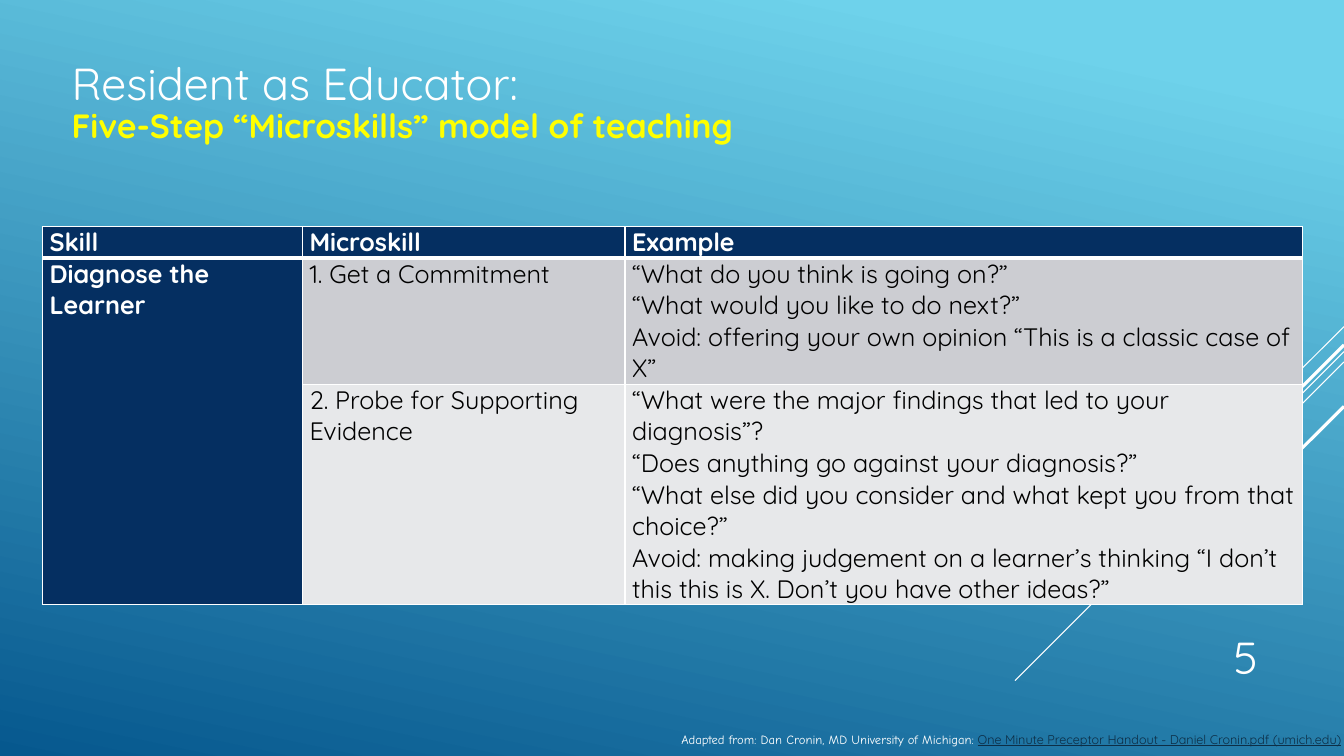
import dataclasses
import typing

import lxml.etree
import pptx
import pptx.dml.color
import pptx.enum.shapes
import pptx.enum.text
import pptx.oxml.ns
import pptx.util

Cm = pptx.util.Cm
Pt = pptx.util.Pt
qn = pptx.oxml.ns.qn
Align = pptx.enum.text.PP_ALIGN
Anchor = pptx.enum.text.MSO_ANCHOR
SANS = "Quicksand"
WHITE = "FFFFFF"
NAVY = "052F61"
WIDE = 33.87


@dataclasses.dataclass
class Ray:
    top: float
    left: float
    end: float
    width: float


@dataclasses.dataclass
class Item:
    row: int
    col: int
    text: str
    fill: str
    ink: str = "000000"
    bold: bool = False


RAYS = [
    Ray(8.23, 31.32, 10.77, 0.75),
    Ray(8.86, 25.58, 17.15, 0.75),
    Ray(9.12, 28.6, 14.4, 0.75),
    Ray(8.69, 29.01, 13.54, 2.25),
    Ray(10.24, 30.33, 13.77, 2.25),
]
COLS = [6.55, 8.13, 17.07]
ROWS = [0.79, 3.18, 5.56]
ITEMS = [
    Item(0, 0, "Skill", NAVY, WHITE, True),
    Item(0, 1, "Microskill", NAVY, WHITE, True),
    Item(0, 2, "Example", NAVY, WHITE, True),
    Item(1, 0, "Diagnose the Learner", NAVY, WHITE, True),
    Item(1, 1, "1. Get a Commitment", "CCCDD2"),
    Item(1, 2, "“What do you think is going on?”\n"
         "“What would you like to do next?”\v"
         "Avoid: offering your own opinion “This is a classic case of X”", "CCCDD2"),
    Item(2, 0, "", NAVY),
    Item(2, 1, "2. Probe for Supporting Evidence", "E7E8EA"),
    Item(2, 2, "“What were the major findings that led to your diagnosis”?\n"
         "“Does anything go against your diagnosis?”\n"
         "“What else did you consider and what kept you from that choice?”\v"
         "Avoid: making judgement on a learner’s thinking "
         "“I don’t this this is X. Don’t you have other ideas?”", "E7E8EA"),
]


def paint(part: typing.Any, tone: str) -> None:
    part.rgb = pptx.dml.color.RGBColor.from_string(tone)


def style(font: typing.Any, size: float, tone: str, bold: bool = False, face: str = SANS) -> None:
    font.name = face
    font.size = Pt(size)
    font.bold = bold
    paint(font.color, tone)


def back(slide: typing.Any) -> None:
    fill = slide.background.fill
    fill.gradient()
    fill.gradient_angle = 258
    for stop, (spot, tone) in zip(fill.gradient_stops, [(0.1, "6ED2EB"), (1, "06588E")]):
        stop.position = spot
        paint(stop.color, tone)


def draw(slide: typing.Any, ray: Ray) -> None:
    line = slide.shapes.add_connector(
        pptx.enum.shapes.MSO_CONNECTOR.STRAIGHT,
        Cm(WIDE), Cm(ray.top), Cm(ray.left), Cm(ray.end))
    line.line.width = Pt(ray.width)
    paint(line.line.color, WHITE)
    props = line._element.find(qn("p:spPr"))
    lxml.etree.SubElement(props, qn("a:effectLst"))


def head(slide: typing.Any) -> None:
    title = slide.shapes.title
    title.left, title.top, title.width, title.height = Cm(1.55), Cm(0.97), Cm(28.37), Cm(2.84)
    frame = title.text_frame
    frame.text = "Resident as Educator:\nFive-Step “Microskills” model of teaching"
    frame.auto_size = pptx.enum.text.MSO_AUTO_SIZE.NONE
    frame.vertical_anchor = Anchor.BOTTOM
    for para in frame.paragraphs:
        para.alignment = Align.LEFT
        para.line_spacing = 0.9
        para.space_before = Pt(0)
    style(frame.paragraphs[0].font, 32, WHITE)
    style(frame.paragraphs[1].font, 24, "FFFF00", True)


def edge(cell: typing.Any, row: int) -> None:
    props = cell._tc.get_or_add_tcPr()
    for side in "LRTB":
        thick = (row, side) in ((0, "B"), (1, "T"))
        line = lxml.etree.SubElement(props, qn("a:ln" + side), w=str(Pt(3 if thick else 1)))
        fill = lxml.etree.SubElement(line, qn("a:solidFill"))
        lxml.etree.SubElement(fill, qn("a:srgbClr"), val=WHITE)


def put(cell: typing.Any, item: Item) -> None:
    edge(cell, item.row)
    cell.fill.solid()
    paint(cell.fill.fore_color, item.fill)
    cell.margin_left = cell.margin_right = Cm(0.18)
    cell.margin_top = cell.margin_bottom = 0
    cell.text = item.text
    for para in cell.text_frame.paragraphs:
        style(para.font, 18, item.ink, item.bold)


def grid(slide: typing.Any) -> None:
    table = slide.shapes.add_table(
        len(ROWS), len(COLS), Cm(1.07), Cm(5.71), Cm(sum(COLS)), Cm(sum(ROWS))).table
    for col, size in zip(table.columns, COLS):
        col.width = Cm(size)
    for row, size in zip(table.rows, ROWS):
        row.height = Cm(size)
    for item in ITEMS:
        put(table.cell(item.row, item.col), item)
    table.cell(1, 0).merge(table.cell(2, 0))


def box(slide: typing.Any, left: float, top: float, width: float, height: float) -> typing.Any:
    frame = slide.shapes.add_textbox(Cm(left), Cm(top), Cm(width), Cm(height)).text_frame
    frame.word_wrap = True
    return frame


def page(slide: typing.Any) -> None:
    frame = box(slide, 28.78, 15.49, 3.18, 1.85)
    frame.vertical_anchor = Anchor.BOTTOM
    para = frame.paragraphs[0]
    para.text = "5"
    para.alignment = Align.RIGHT
    style(para.font, 32, WHITE)


def credit(slide: typing.Any) -> None:
    para = box(slide, 16.92, 18.36, 20.19, 0.61).paragraphs[0]
    para.line_spacing = 0.9
    lead = para.add_run()
    lead.text = "Adapted from: Dan Cronin, MD University of Michigan: "
    style(lead.font, 9, WHITE, face="Comic Neue")
    link = para.add_run()
    link.text = "One Minute Preceptor Handout - Daniel Cronin.pdf (umich.edu)"
    style(link.font, 9, "0D2E46")
    link.font.underline = True


def main() -> None:
    deck = pptx.Presentation()
    deck.slide_width, deck.slide_height = Cm(WIDE), Cm(19.05)
    slide = deck.slides.add_slide(deck.slide_layouts[5])
    back(slide)
    for ray in RAYS:
        draw(slide, ray)
    head(slide)
    page(slide)
    grid(slide)
    credit(slide)
    deck.save("out.pptx")


if __name__ == "__main__":
    main()
